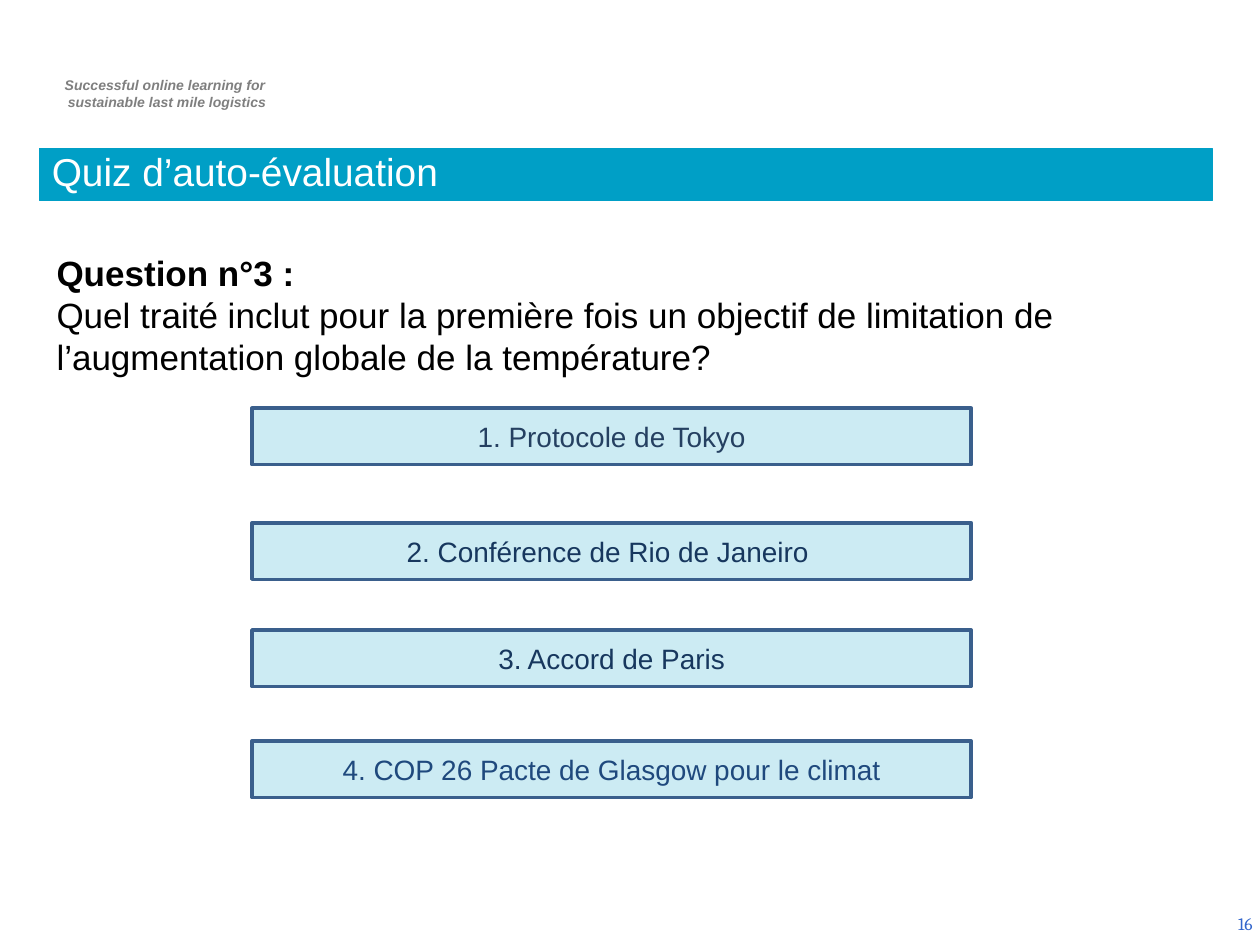
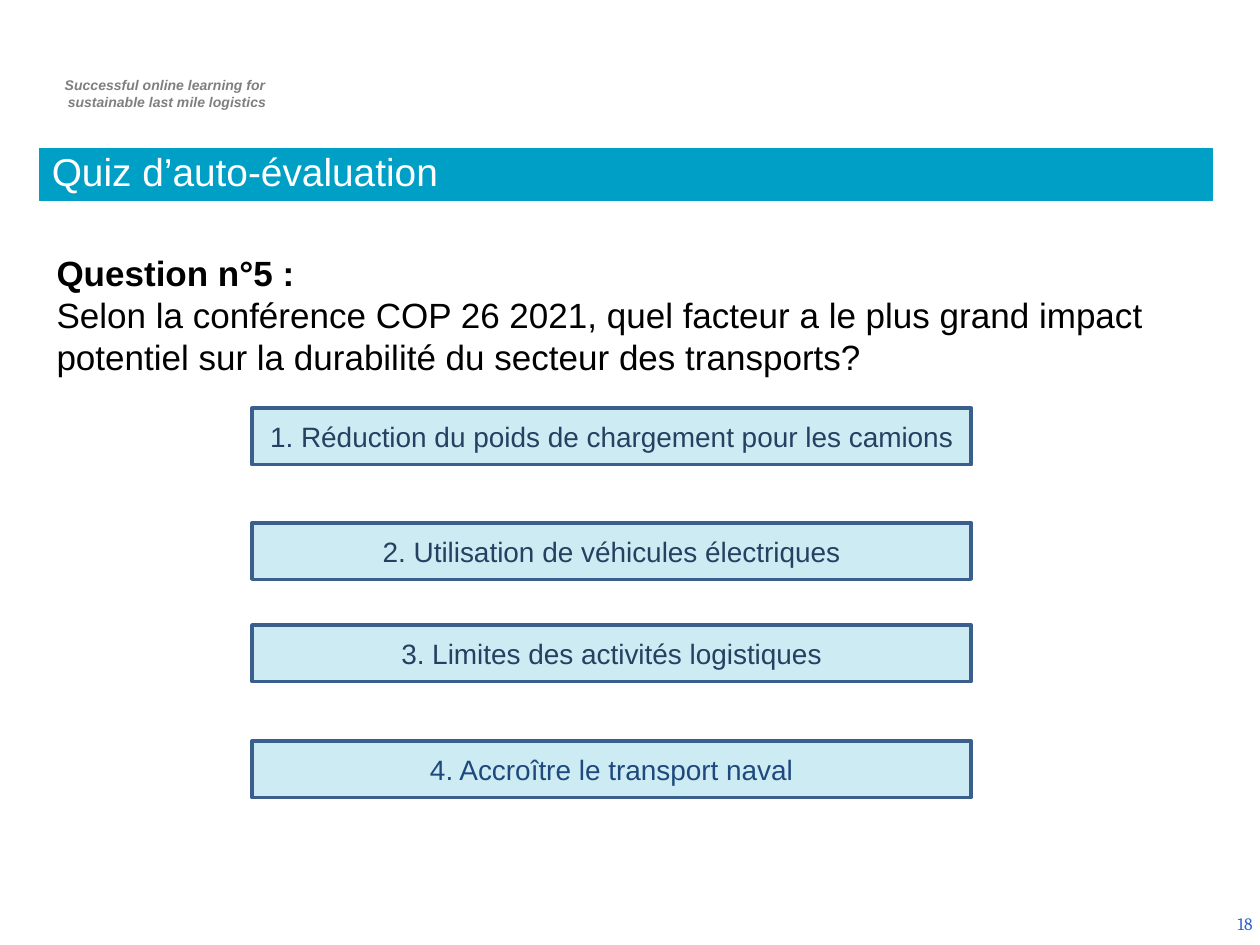
"""Build two self-assessment quiz slides on climate and sustainable logistics."""
import lxml.etree
import pptx
import pptx.dml.color
import pptx.enum.shapes
import pptx.enum.text
import pptx.oxml.ns
import pptx.util

Cm = pptx.util.Cm
Pt = pptx.util.Pt
ALIGN = pptx.enum.text.PP_ALIGN
ANCHOR = pptx.enum.text.MSO_ANCHOR

COLORS = {
    "band": "009FC6",
    "border": "3A5F8C",
    "white": "FFFFFF",
    "black": "000000",
    "grey": "7F7F7F",
    "number": "3366CC",
    "slate": "254061",
    "navy": "17375E",
    "blue": "1F497D",
}

HEADER = ["Successful online learning for ", "sustainable last mile logistics"]
TITLE = "Quiz d’auto-évaluation"
CONTENT_WIDTH = 23.65

QUIZZES = [
    {
        "page": 16,
        "heading": "Question n°3 :",
        "question": "Quel traité inclut pour la première fois un objectif de limitation "
                    "de l’augmentation globale de la température?",
        "options": [
            (8.23, "1. Protocole de Tokyo", "slate"),
            (10.54, "2. Conférence de Rio de Janeiro ", "navy"),
            (12.7, "3. Accord de Paris", "navy"),
            (14.94, "4. COP 26 Pacte de Glasgow pour le climat", "blue"),
        ],
    },
    {
        "page": 18,
        "heading": "Question n°5 :",
        "question": "Selon la conférence COP 26 2021, quel facteur a le plus grand impact "
                    "potentiel sur la durabilité du secteur des transports?",
        "options": [
            (8.23, "1. Réduction du poids de chargement pour les camions", "slate"),
            (10.54, "2. Utilisation de véhicules électriques", "slate"),
            (12.6, "3. Limites des activités logistiques", "slate"),
            (14.94, "4. Accroître le transport naval", "blue"),
        ],
    },
]


def rgb(name):
    return pptx.dml.color.RGBColor.from_string(COLORS[name])


class QuizDeck:
    def __init__(self):
        self.presentation = pptx.Presentation()
        self.presentation.slide_width = Cm(25.4)
        self.presentation.slide_height = Cm(19.05)
        self.slide = None

    def set_text(self, shape, lines, size, color, align=ALIGN.LEFT, anchor=ANCHOR.TOP,
                 font="Arial", bold=False, italic=False):
        frame = shape.text_frame
        frame.text = "\n".join(lines)
        frame.word_wrap = True
        frame.auto_size = pptx.enum.text.MSO_AUTO_SIZE.NONE
        frame.vertical_anchor = anchor
        for paragraph in frame.paragraphs:
            paragraph.alignment = align
            for run in paragraph.runs:
                run.font.name = font
                run.font.size = Pt(size)
                run.font.bold = bold
                run.font.italic = italic
                run.font.color.rgb = rgb(color)
        return frame

    def paint(self, shape, fill, line, width):
        shape.fill.solid()
        shape.fill.fore_color.rgb = rgb(fill)
        shape.line.color.rgb = rgb(line)
        shape.line.width = Pt(width)

    def text(self, left, top, width, height, lines, size, color, **style):
        box = self.slide.shapes.add_textbox(Cm(left), Cm(top), Cm(width), Cm(height))
        return self.set_text(box, lines, size, color, **style)

    def title(self, text):
        title = self.slide.shapes.title
        title.left, title.top = Cm(0.79), Cm(3)
        title.width, title.height = Cm(CONTENT_WIDTH), Cm(1.04)
        self.paint(title, "band", "band", 0.75)
        frame = self.set_text(title, [text], 22.2, "white", anchor=ANCHOR.BOTTOM)
        frame.paragraphs[0].line_spacing = 0.8

    def question(self, heading, question):
        frame = self.text(0.89, 4.95, CONTENT_WIDTH, 3.68, [heading, question], 20, "black")
        frame.paragraphs[0].runs[0].font.bold = True

    def option(self, top, label, color):
        shape = self.slide.shapes.add_shape(
            pptx.enum.shapes.MSO_SHAPE.RECTANGLE, Cm(5.08), Cm(top), Cm(14.5), Cm(1.14))
        shape.shadow.inherit = False
        self.paint(shape, "band", "border", 2)
        fill_color = shape.element.xpath("./p:spPr/a:solidFill/a:srgbClr")[0]
        lxml.etree.SubElement(fill_color, pptx.oxml.ns.qn("a:alpha"), val="20000")
        self.set_text(shape, [label], 16, color, align=ALIGN.CENTER, anchor=ANCHOR.MIDDLE)

    def add_quiz(self, quiz):
        layout = self.presentation.slide_layouts.get_by_name("Title Only")
        self.slide = self.presentation.slides.add_slide(layout)
        self.title(TITLE)
        self.text(0.84, 1.42, 5.06, 0.94, HEADER, 8, "grey",
                  align=ALIGN.CENTER, bold=True, italic=True)
        self.text(19.58, 18.11, 5.92, 1.02, [str(quiz["page"])], 10, "number",
                  align=ALIGN.RIGHT, anchor=ANCHOR.MIDDLE, font="Cambria")
        self.question(quiz["heading"], quiz["question"])
        for top, label, color in quiz["options"]:
            self.option(top, label, color)


def main():
    deck = QuizDeck()
    for quiz in QUIZZES:
        deck.add_quiz(quiz)
    deck.presentation.save("out.pptx")


if __name__ == "__main__":
    main()
